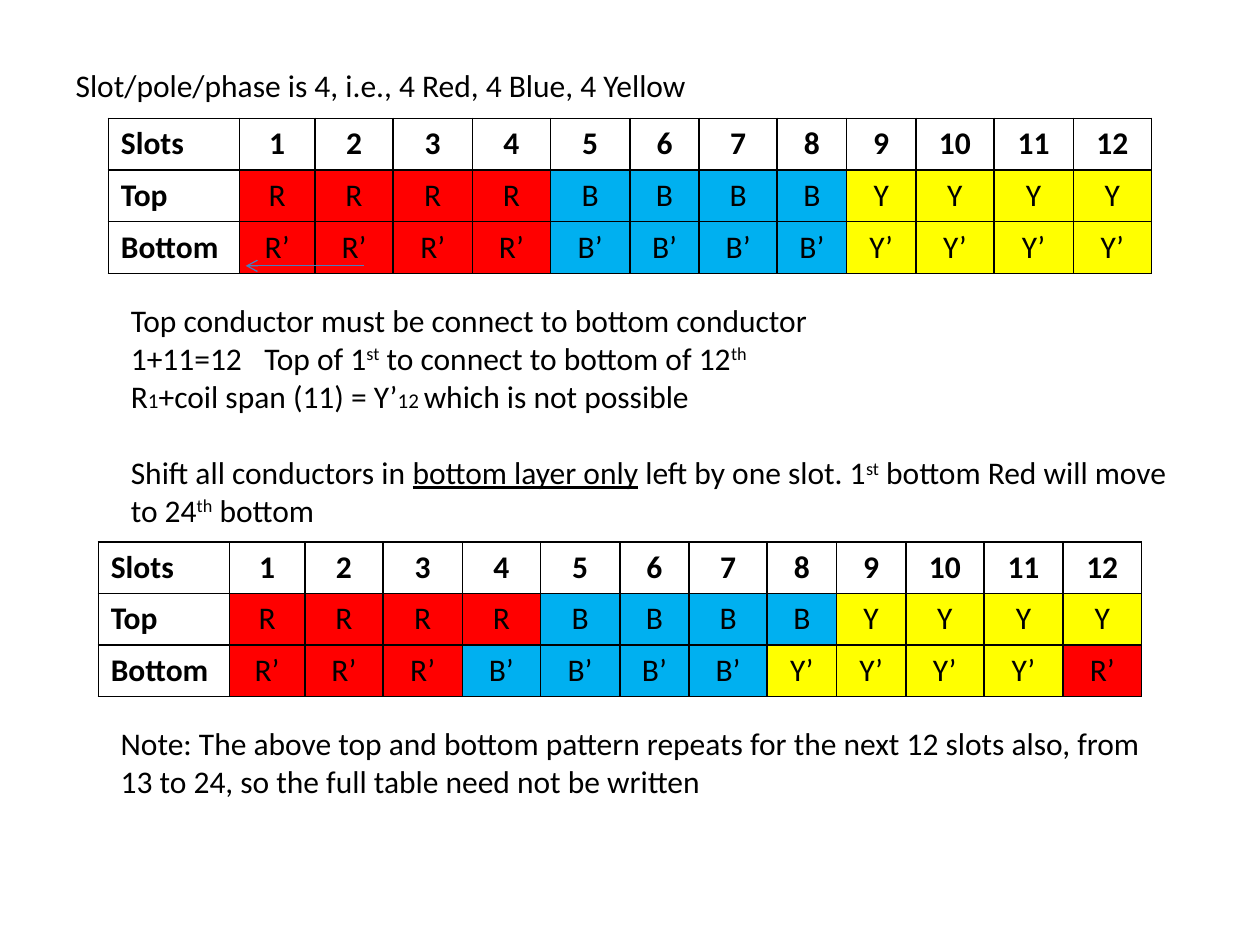
from lxml import etree
from pptx import Presentation
from pptx import util as u
from pptx.dml.color import RGBColor
from pptx.enum import shapes, text
from pptx.oxml import parse_xml
from pptx.oxml.ns import nsdecls, qn

BLACK = RGBColor(0x00, 0x00, 0x00)
ARROW_BLUE = RGBColor(0x4B, 0x7E, 0xBC)
PHASE_FILL = {
    "R": RGBColor(0xFF, 0x00, 0x00),
    "B": RGBColor(0x00, 0xB0, 0xF0),
    "Y": RGBColor(0xFF, 0xFF, 0x00),
}
FONT, SIZE, SMALL = "Calibri", u.Pt(18), u.Pt(12)
LINE_GAP = u.Pt(22)

# Content: a run is (words, style)
INTRO = [[("Slot/pole/phase is 4, i.e., 4 Red, 4 Blue, 4 Yellow", "")]]
RULES = [
    [("Top conductor must be connect to bottom conductor", "")],
    [("1+11=12\tTop of 1", ""), ("st", "super"),
     (" to connect to bottom of 12", ""), ("th", "super")],
    [("R", ""), ("1", "small"), ("+coil span (11) = Y’", ""),
     ("12 ", "small"), ("which is not possible", "")],
    [("Shift all conductors in ", ""), ("bottom layer only", "underline"),
     (" left by one slot. 1", ""), ("st", "super"),
     (" bottom Red will move to 24", ""), ("th", "super"), (" bottom", "")],
]
NOTE = [
    [("Note: The above top and bottom pattern repeats for the next 12 slots also, from", "")],
    [("13 to 24, so the full table need not be written", "")],
]
SLOTS = [str(slot) for slot in range(1, 13)]
TOP = [phase for phase in "RBY" for _ in range(4)]
BOTTOM = [phase + "’" for phase in TOP]
SHIFTED = BOTTOM[1:] + BOTTOM[:1]

# Table grid, in inches
COLUMNS = [1.04, 0.6, 0.62, 0.63, 0.62, 0.63, 0.55, 0.62, 0.55, 0.55, 0.62, 0.63, 0.62]
ROW_HEIGHT = 0.41


def style_font(font, bold=None):
    font.name, font.size, font.bold = FONT, SIZE, bold
    font.color.rgb = BLACK


def write(frame, paragraphs):
    for i, runs in enumerate(paragraphs):
        paragraph = frame.paragraphs[0] if i == 0 else frame.add_paragraph()
        for words, style in runs:
            run = paragraph.add_run()
            run.text = words
            if style == "super":
                run._r.get_or_add_rPr().set("baseline", "30000")
            elif style == "small":
                run.font.size = SMALL
            elif style == "underline":
                run.font.underline = True


def add_text(slide, box, paragraphs, wrap=True):
    frame = slide.shapes.add_textbox(*map(u.Inches, box)).text_frame
    frame.word_wrap = wrap
    write(frame, paragraphs)
    return frame


def add_borders(cell):
    properties = cell._tc.get_or_add_tcPr()
    for side in ("lnL", "lnR", "lnT", "lnB"):
        properties.append(parse_xml(
            f'<a:{side} {nsdecls("a")} w="12700"><a:solidFill>'
            f'<a:srgbClr val="{BLACK}"/></a:solidFill></a:{side}>'))


def add_winding_table(slide, left, top, bottom_layer):
    rows = [["Slots"] + SLOTS, ["Top"] + TOP, ["Bottom"] + bottom_layer]
    table = slide.shapes.add_table(
        len(rows), len(COLUMNS), u.Inches(left), u.Inches(top),
        u.Inches(sum(COLUMNS)), u.Inches(ROW_HEIGHT * len(rows))).table
    table.first_row = table.horz_banding = False
    for column, width in zip(table.columns, COLUMNS):
        column.width = u.Inches(width)
    for r, row in enumerate(rows):
        table.rows[r].height = u.Inches(ROW_HEIGHT)
        for c, words in enumerate(row):
            cell = table.cell(r, c)
            cell.text = words
            add_borders(cell)
            is_heading = r == 0 or c == 0
            if is_heading:
                cell.fill.background()
            else:
                cell.fill.solid()
                cell.fill.fore_color.rgb = PHASE_FILL[words[0]]
            paragraph = cell.text_frame.paragraphs[0]
            if c > 0:
                paragraph.alignment = text.PP_ALIGN.CENTER
            style_font(paragraph.font, is_heading)


def main():
    deck = Presentation()
    deck.slide_width, deck.slide_height = u.Inches(10), u.Inches(7.5)
    slide = deck.slides.add_slide(deck.slide_layouts[1])

    # Opening line in the body placeholder; the slide has no title
    title = slide.shapes.title._element
    title.getparent().remove(title)
    body = slide.placeholders[1]
    body.left, body.top, body.width, body.height = map(u.Inches, (0.5, 0.47, 9, 6.23))
    write(body.text_frame, INTRO)
    opening = body.text_frame.paragraphs[0]
    opening_properties = opening._p.get_or_add_pPr()
    opening_properties.set("marL", str(u.Inches(0.38)))
    opening_properties.set("indent", str(u.Inches(-0.38)))
    etree.SubElement(opening_properties, qn("a:buNone"))
    style_font(opening.font)

    # First winding, with the coil rules below it
    add_winding_table(slide, 0.86, 0.94, BOTTOM)
    rules = add_text(slide, (0.94, 2.34, 8.56, 1.92), RULES)
    tabs = etree.SubElement(rules.paragraphs[1]._p.get_or_add_pPr(), qn("a:tabLst"))
    etree.SubElement(tabs, qn("a:tab"), pos=str(u.Inches(1.06)), algn="l")
    rules.paragraphs[-1].space_before = LINE_GAP

    # Winding with the bottom layer shifted, and its note
    add_winding_table(slide, 0.78, 4.3, SHIFTED)
    note = add_text(slide, (0.86, 5.7, 8.4, 0.71), NOTE, wrap=False)
    for paragraph in rules.paragraphs + note.paragraphs:
        style_font(paragraph.font)

    # Arrow showing the shift to the left
    shift = slide.shapes.add_connector(
        shapes.MSO_CONNECTOR.STRAIGHT, *map(u.Inches, (2.89, 2.11, 1.95, 2.11)))
    shift.line.color.rgb = ARROW_BLUE
    shift.line.width = u.Pt(0.75)
    etree.SubElement(shift.line._get_or_add_ln(), qn("a:tailEnd"), type="arrow")
    etree.SubElement(shift._element.spPr, qn("a:effectLst"))

    deck.save("out.pptx")


if __name__ == "__main__":
    main()
